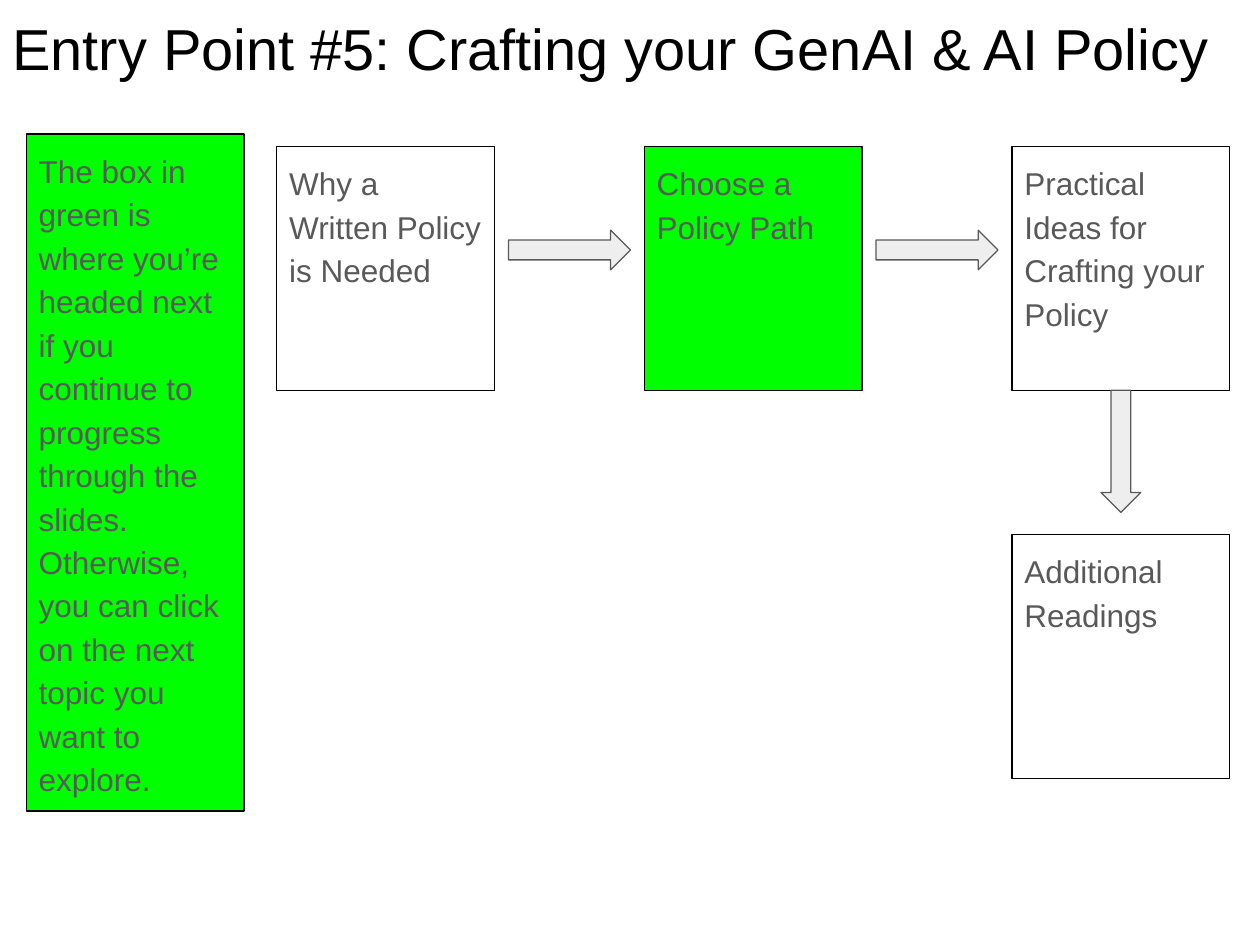
from pptx import Presentation
from pptx.dml.color import RGBColor
from pptx.enum.shapes import MSO_SHAPE
from pptx.enum.text import MSO_ANCHOR, PP_ALIGN
from pptx.util import Cm, Pt

COLORS = {"next": "00FF00", "border": "000000", "title": "000000",
          "body": "595959", "arrow": "EEEEEE"}
FRAME = {"word_wrap": True, "vertical_anchor": MSO_ANCHOR.TOP,
         "margin_left": Cm(0.25), "margin_right": Cm(0.25),
         "margin_top": Cm(0.25), "margin_bottom": Cm(0.25)}
TITLE_PARAGRAPH = {"alignment": PP_ALIGN.LEFT, "line_spacing": 1.0}
BODY_PARAGRAPH = {"alignment": PP_ALIGN.LEFT, "line_spacing": 1.15,
                  "space_after": Pt(12)}


def write(frame, text, size, color, paragraph_format):
    frame.text = text
    for name, value in FRAME.items():
        setattr(frame, name, value)
    paragraph = frame.paragraphs[0]
    for name, value in paragraph_format.items():
        setattr(paragraph, name, value)
    font = paragraph.runs[0].font
    font.name, font.size = "Arial", Pt(size)
    font.color.rgb = RGBColor.from_string(COLORS[color])


def add_outlined(kind, left, top, width, height, fill, line):
    """Add a shape with a thin outline; fill None leaves it open."""
    shape = slide.shapes.add_shape(kind, Cm(left), Cm(top), Cm(width), Cm(height))
    shape.shadow.inherit = False
    if fill:
        shape.fill.solid()
        shape.fill.fore_color.rgb = RGBColor.from_string(COLORS[fill])
    else:
        shape.fill.background()
    shape.line.color.rgb = RGBColor.from_string(COLORS[line])
    shape.line.width = Pt(0.75)
    return shape


prs = Presentation()
prs.slide_width, prs.slide_height = Cm(25.4), Cm(19.05)
slide = prs.slides.add_slide(prs.slide_layouts[5])

title = slide.shapes.title
title.left, title.top, title.width, title.height = Cm(0), Cm(0), Cm(24.77), Cm(1.93)
write(title.text_frame, "Entry Point #5: Crafting your GenAI & AI Policy",
      33, "title", TITLE_PARAGRAPH)

# Topics sit on a grid of columns and rows
LEFT, TOP = 5.58, 2.95
COLUMN_STEP, ROW_STEP = 7.41, 7.82
BOX_WIDTH, BOX_HEIGHT = 4.39, 4.92
ARROW_LENGTH, ARROW_WIDTH = 2.46, 0.8

topics = [
    ("Why a Written Policy is Needed", 0, 0, None),
    ("Choose a Policy Path", 1, 0, "next"),
    ("Practical Ideas for Crafting your Policy", 2, 0, None),
    ("Additional Readings", 2, 1, None),
]
boxes = [(text, LEFT + column * COLUMN_STEP, TOP + row * ROW_STEP, BOX_HEIGHT, fill)
         for text, column, row, fill in topics]
boxes.append((
    "The box in green is where you’re headed next if you continue to progress "
    "through the slides. Otherwise, you can click on the next topic you want to "
    "explore.", 0.53, 2.7, 13.65, "next"))
for text, left, top, height, fill in boxes:
    box = add_outlined(MSO_SHAPE.RECTANGLE, left, top, BOX_WIDTH, height, fill, "border")
    write(box.text_frame, text, 18, "body", BODY_PARAGRAPH)

# Arrow centres: two between the columns, one below the last column
gap_center = LEFT + (BOX_WIDTH + COLUMN_STEP) / 2
last_center = LEFT + 2 * COLUMN_STEP + BOX_WIDTH / 2
arrows = [
    (gap_center, 5.04, 0),
    (gap_center + COLUMN_STEP, 5.04, 0),
    (last_center, TOP + BOX_HEIGHT + ARROW_LENGTH / 2, 90),
]
for center_x, center_y, rotation in arrows:
    arrow = add_outlined(MSO_SHAPE.RIGHT_ARROW, center_x - ARROW_LENGTH / 2,
                         center_y - ARROW_WIDTH / 2, ARROW_LENGTH, ARROW_WIDTH,
                         "arrow", "body")
    arrow.rotation = rotation

prs.save("out.pptx")
